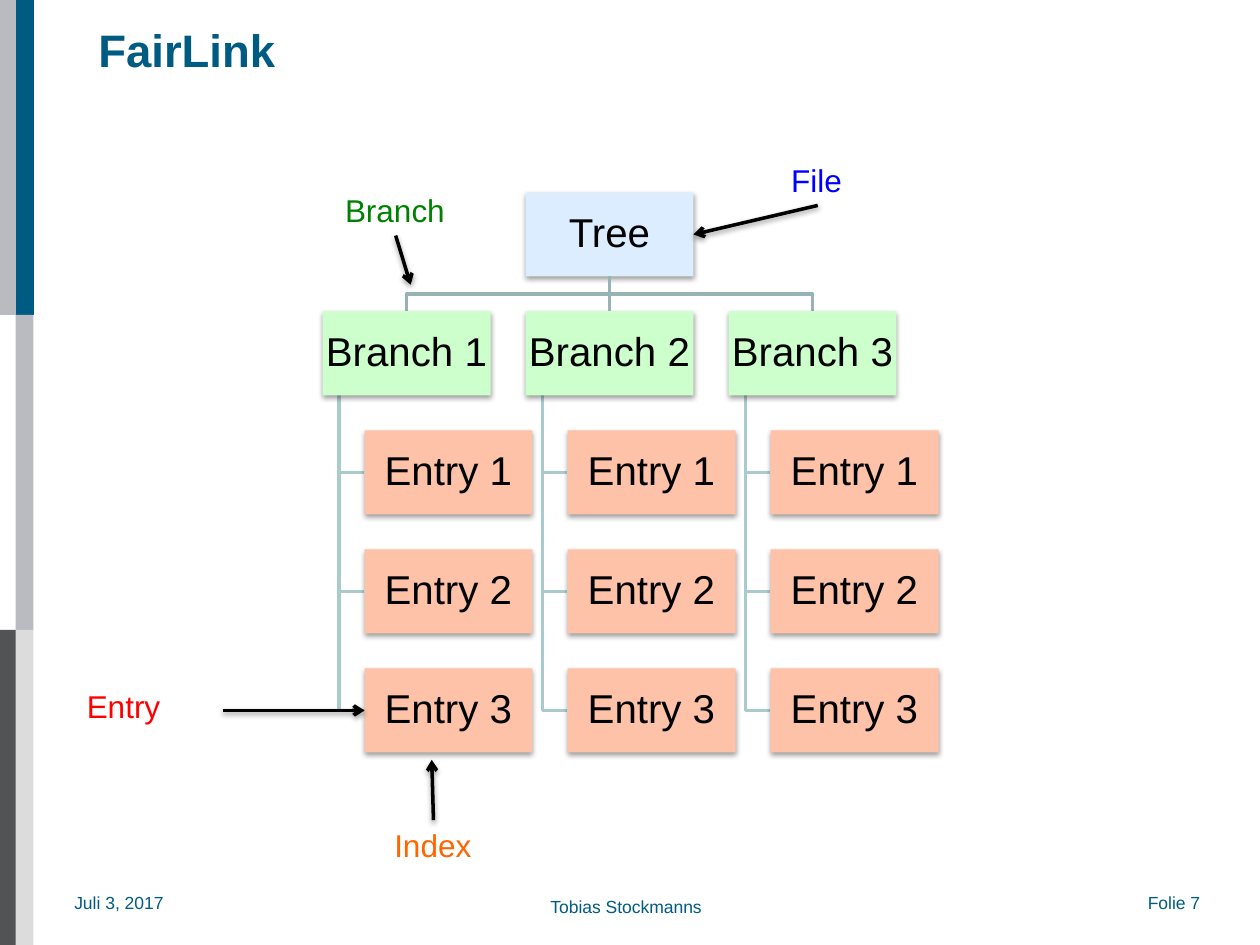
"""Build the FairLink slide: a tree of branches and entries with callouts."""
import pptx
import pptx.dml.color
import pptx.enum.shapes
import pptx.enum.text
import pptx.oxml
import pptx.oxml.ns
import pptx.util

Pt = pptx.util.Pt
ALIGN = pptx.enum.text.PP_ALIGN
ANCHOR = pptx.enum.text.MSO_ANCHOR
COLORS = {
    "blue": "005B82", "silver": "B9BBC0", "slate": "515355", "pale": "DCDCDC",
    "tree": "DBEDFF", "branch": "CCFFCC", "entry": "FEC2A8",
    "trunk link": "96B3B6", "entry link": "AACBCE", "black": "000000",
    "File": "0000FF", "Branch": "008000", "Entry": "FF0000", "Index": "FF6600",
}
SIDE_BARS = [
    (0, 0, "silver"), (0, 2, "slate"),
    (9.2, 0, "blue"), (8.9, 1, "silver"), (8.9, 2, "pale"),
]
BAR_WIDTH, BAR_HEIGHT = 10.2, 180
FOOTERS = [
    ("Juli 3, 2017", 42.5, 509.8, 61),
    ("Folie 7", 655.9, 509.8, 45),
    ("Tobias Stockmanns", 314.6, 511.9, 91),
]
BRANCHES = ["Branch 1", "Branch 2", "Branch 3"]
ENTRIES = ["Entry 1", "Entry 2", "Entry 3"]
CALLOUTS = [
    ("File", 445, 88.6, 44, (467.3, 117.4), (396.2, 134)),
    ("Branch", 190.1, 105.8, 72, (226.1, 134.6), (234.7, 162.7)),
    ("Entry", 42.5, 388.8, 57, (127.4, 406), (208.3, 406)),
    ("Index", 218.2, 468.7, 59, (247.7, 468.7), (246.7, 434.2)),
]
BOX_WIDTH, BOX_HEIGHT = 96, 48
COLUMN_STEP, ROW_STEP = 116, 68
BRANCH_LEFT, TREE_TOP = 184.3, 110
ENTRY_INDENT, SPINE_INDENT = 24, 9.6
SHADOW = (
    '<a:outerShdw xmlns:a="http://schemas.openxmlformats.org/drawingml/2006/main"'
    ' blurRad="40000" dist="20000" dir="5400000" rotWithShape="0">'
    '<a:srgbClr val="000000"><a:alpha val="38000"/></a:srgbClr></a:outerShdw>'
)


def color(name):
    return pptx.dml.color.RGBColor.from_string(COLORS[name])


def write(shape, text, size, ink, margins=(0, 0), bold=False, **format_values):
    frame = shape.text_frame
    horizontal, vertical = map(Pt, margins)
    settings = {
        "margin_left": horizontal, "margin_right": horizontal,
        "margin_top": vertical, "margin_bottom": vertical,
        "word_wrap": False, "vertical_anchor": ANCHOR.TOP,
    }
    for name, value in settings.items():
        setattr(frame, name, value)
    paragraph = frame.paragraphs[0]
    paragraph.text = text
    for name, value in {"size": Pt(size), "name": "Arial", "bold": bold}.items():
        setattr(paragraph.font, name, value)
    paragraph.font.color.rgb = color(ink)
    for name, value in format_values.items():
        setattr(paragraph, name, value)


def add_text(slide, text, left, top, width, height, size, ink, **options):
    box = slide.shapes.add_textbox(Pt(left), Pt(top), Pt(width), Pt(height))
    write(box, text, size, ink, **options)
    return box


def add_rectangle(slide, left, top, width, height, fill):
    shape = slide.shapes.add_shape(
        pptx.enum.shapes.MSO_SHAPE.RECTANGLE, Pt(left), Pt(top), Pt(width), Pt(height))
    shape.shadow.inherit = False
    shape.fill.solid()
    shape.fill.fore_color.rgb = color(fill)
    shape.line.fill.background()
    return shape


def add_box(slide, text, left, top, fill):
    box = add_rectangle(slide, left, top, BOX_WIDTH, BOX_HEIGHT, fill)
    effects = box.element.spPr.find(pptx.oxml.ns.qn("a:effectLst"))
    effects.append(pptx.oxml.parse_xml(SHADOW))
    write(box, text, 23, "black", (1.3, 1.3), alignment=ALIGN.CENTER, line_spacing=0.9)
    box.text_frame.vertical_anchor = ANCHOR.MIDDLE
    return box


def style_line(shape, ink):
    shape.line.color.rgb = color(ink)
    shape.line.width = Pt(2)


def add_link(slide, points, ink):
    start, *rest = [(Pt(x), Pt(y)) for x, y in points]
    builder = slide.shapes.build_freeform(*start)
    builder.add_line_segments(rest, close=False)
    link = builder.convert_to_shape()
    link.shadow.inherit = False
    link.fill.background()
    style_line(link, ink)


def add_connector(slide, start, end, ink):
    connector = slide.shapes.add_connector(
        pptx.enum.shapes.MSO_CONNECTOR.STRAIGHT, *map(Pt, (*start, *end)))
    style_line(connector, ink)
    properties = connector.element.spPr
    effects = properties.makeelement(pptx.oxml.ns.qn("a:effectLst"), {})
    properties.append(effects)
    return connector, effects


def add_arrow(slide, start, end):
    connector, effects = add_connector(slide, start, end, "black")
    effects.append(pptx.oxml.parse_xml(SHADOW))
    line = connector.element.spPr.find(pptx.oxml.ns.qn("a:ln"))
    line.append(line.makeelement(pptx.oxml.ns.qn("a:tailEnd"), {"type": "arrow"}))
    return connector


def add_tree(slide):
    tree_left = BRANCH_LEFT + COLUMN_STEP
    tree_center = tree_left + BOX_WIDTH / 2
    tree_bottom = TREE_TOP + BOX_HEIGHT
    branch_top = TREE_TOP + ROW_STEP
    middle = (tree_bottom + branch_top) / 2
    columns = [BRANCH_LEFT + index * COLUMN_STEP for index in range(len(BRANCHES))]
    rows = [branch_top + (index + 1) * ROW_STEP for index in range(len(ENTRIES))]

    for left in columns:
        spine = left + SPINE_INDENT
        for top in reversed(rows):
            center = top + BOX_HEIGHT / 2
            add_link(slide, [(spine, branch_top + BOX_HEIGHT), (spine, center),
                             (left + ENTRY_INDENT, center)], "entry link")
        if left != tree_left:
            center = left + BOX_WIDTH / 2
            add_link(slide, [(tree_center, tree_bottom), (tree_center, middle),
                             (center, middle), (center, branch_top)], "trunk link")

    boxes = {"Tree": add_box(slide, "Tree", tree_left, TREE_TOP, "tree")}
    for branch, left in zip(BRANCHES, columns):
        boxes[branch] = add_box(slide, branch, left, branch_top, "branch")
        for entry, top in zip(ENTRIES, rows):
            boxes[branch, entry] = add_box(slide, entry, left + ENTRY_INDENT, top, "entry")

    trunk, _ = add_connector(
        slide, (tree_center, tree_bottom), (tree_center, branch_top), "trunk link")
    trunk.begin_connect(boxes["Tree"], 2)
    trunk.end_connect(boxes["Branch 2"], 0)
    return boxes


def main():
    presentation = pptx.Presentation()
    presentation.slide_width, presentation.slide_height = Pt(720), Pt(540)
    slide = presentation.slides.add_slide(presentation.slide_layouts[6])
    for left, row, fill in SIDE_BARS:
        add_rectangle(slide, left, row * BAR_HEIGHT, BAR_WIDTH, BAR_HEIGHT, fill)
    for text, left, top, width in FOOTERS:
        add_text(slide, text, left, top, width, 12.2, 10, "blue")
    title = add_text(slide, "FairLink", 56.2, 5.8, 523.4, 44.6, 26, "blue", bold=True)
    title.text_frame.word_wrap = True
    title.text_frame.vertical_anchor = ANCHOR.MIDDLE

    boxes = add_tree(slide)
    targets = {"File": (boxes["Tree"], 3), "Entry": (boxes["Branch 1", "Entry 3"], 1)}
    for text, left, top, width, start, end in CALLOUTS:
        add_text(slide, text, left, top, width, 28.8, 18, text, margins=(7.2, 3.6))
        arrow = add_arrow(slide, start, end)
        if text in targets:
            arrow.end_connect(*targets[text])
    presentation.save("out.pptx")


if __name__ == "__main__":
    main()
